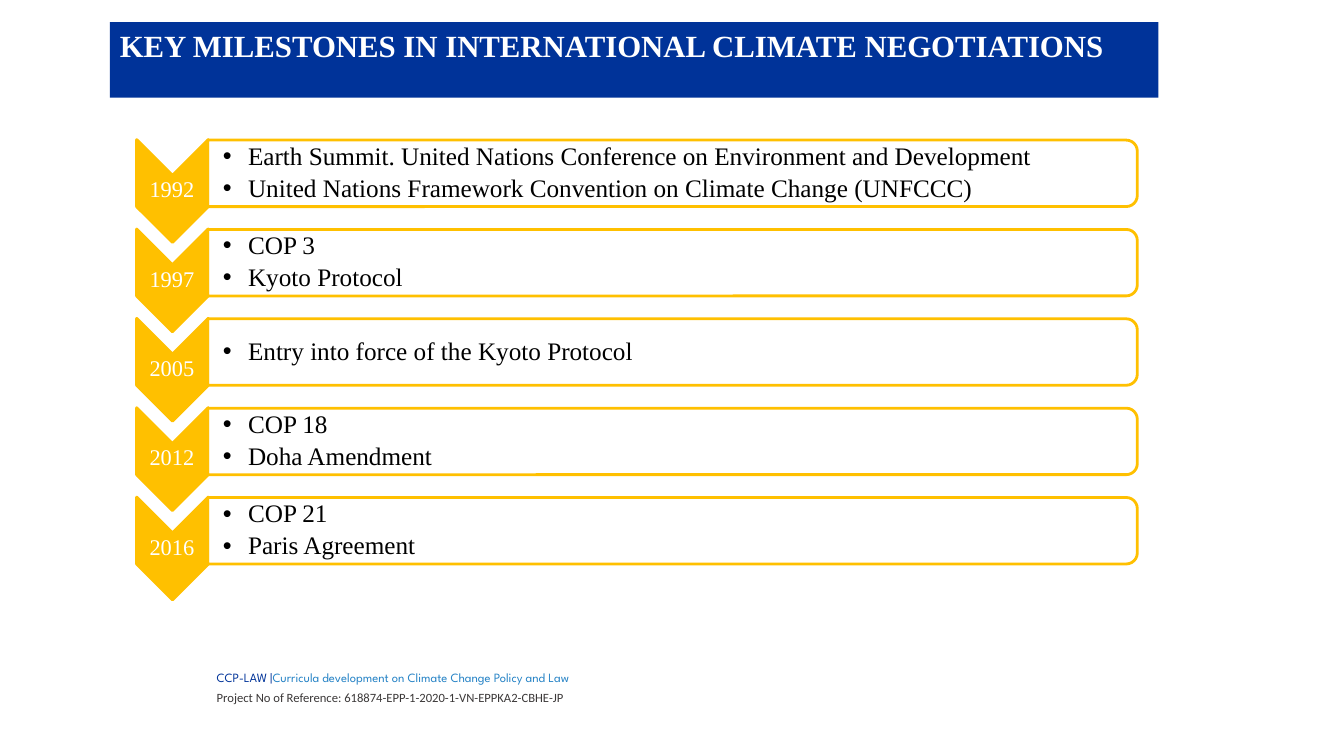
from lxml import etree
from pptx import Presentation
from pptx import util as u
from pptx.dml.color import RGBColor
from pptx.enum import shapes, text
from pptx.oxml.ns import qn

SERIF = "Times New Roman"
BLUE, GOLD, WHITE, BLACK = "003399", "FFC000", "FFFFFF", "000000"
TOP, STEP = 1.42, 0.8865
STONES = [
    ("1992", ["Earth Summit. United Nations Conference on Environment and Development",
              "United Nations Framework Convention on Climate Change (UNFCCC)"]),
    ("1997", ["COP 3", "Kyoto Protocol"]),
    ("2005", ["Entry into force of the Kyoto Protocol"]),
    ("2012", ["COP 18", "Doha Amendment"]),
    ("2016", ["COP 21", "Paris Agreement"]),
]
FOOT = [
    [("CCP-LAW |", "League Spartan", BLUE),
     ("Curricula development on Climate Change Policy and Law", "League Spartan", "2683C6")],
    [("Project No of Reference: 618874-EPP-1-2020-1-VN-EPPKA2-CBHE-JP", "Calibri", "3B3838")],
]


def rgb(code):
    return RGBColor.from_string(code)


def assign(item, **values):
    for name, value in values.items():
        setattr(item, name, value)


def inset(item, left, top, right, bottom):
    assign(item, margin_left=u.Inches(left), margin_top=u.Inches(top),
           margin_right=u.Inches(right), margin_bottom=u.Inches(bottom))


def write(par, words, size, color, face=SERIF, bold=False):
    run = par.add_run()
    run.text = words
    assign(run.font, size=u.Pt(size), name=face, bold=bold)
    run.font.color.rgb = rgb(color)


def shape(slide, kind, at, fill, line=None, turn=0):
    item = slide.shapes.add_shape(kind, *map(u.Inches, at))
    item.shadow.inherit = False
    item.rotation = turn
    item.fill.solid()
    item.fill.fore_color.rgb = rgb(fill)
    if line:
        item.line.color.rgb = rgb(line)
        item.line.width = u.Pt(2)
    else:
        item.line.fill.background()
    return item


def fade(item, share):
    """Set the opacity of a solid fill, in percent."""
    color = item.fill._xPr.find(qn("a:solidFill"))[0]
    etree.SubElement(color, qn("a:alpha")).set("val", str(share * 1000))


def label(slide, at, left=0.01):
    """Add a middle-anchored text box and return its frame."""
    frame = slide.shapes.add_textbox(*map(u.Inches, at)).text_frame
    assign(frame, word_wrap=True, vertical_anchor=text.MSO_ANCHOR.MIDDLE)
    inset(frame, left, 0.01, 0.01, 0.01)
    return frame


def lines(frame, count):
    """Yield the given number of paragraphs, starting with the first."""
    for num in range(count):
        yield frame.add_paragraph() if num else frame.paragraphs[0]


def bullet(par):
    props = par._p.get_or_add_pPr()
    indent = u.Inches(0.25)
    props.set("marL", str(indent))
    props.set("indent", str(-indent))
    color = etree.SubElement(props, qn("a:buClr"))
    etree.SubElement(color, qn("a:srgbClr")).set("val", BLACK)
    etree.SubElement(props, qn("a:buFont")).set("typeface", "Arial")
    etree.SubElement(props, qn("a:buChar")).set("char", "•")


def banner(slide, words):
    bar = shape(slide, shapes.MSO_SHAPE.RECTANGLE, (1.09, 0.22, 10.4, 0.75), BLUE)
    frame = bar.text_frame
    assign(frame, word_wrap=True, vertical_anchor=text.MSO_ANCHOR.TOP)
    inset(frame, 0.1, 0.05, 0.1, 0.05)
    par = frame.paragraphs[0]
    par.alignment = text.PP_ALIGN.LEFT
    write(par, words, 22, WHITE, bold=True)


def stone(slide, top, year, events):
    shape(slide, shapes.MSO_SHAPE.CHEVRON, (1.2, top + 0.12, 1.02, 0.71), GOLD, GOLD, 90)
    par = label(slide, (1.35, top + 0.32, 0.71, 0.3)).paragraphs[0]
    assign(par, alignment=text.PP_ALIGN.CENTER, line_spacing=0.9)
    write(par, year, 16, WHITE)

    panel = shape(slide, shapes.MSO_SHAPE.ROUND_2_SAME_RECTANGLE,
                  (6.34, top - 4.31, 0.66, 9.22), WHITE, GOLD, 90)
    fade(panel, 90)
    frame = label(slide, (2.07, top, 9.18, 0.6), 0.14)
    for par, event in zip(lines(frame, len(events)), events):
        assign(par, line_spacing=0.9, space_after=u.Pt(3.4))
        bullet(par)
        write(par, event, 18, BLACK)


def footer(slide):
    at = map(u.Inches, (1.3, 6.67, 4.52, 0.33))
    table = slide.shapes.add_table(1, 2, *at).table
    assign(table, first_row=False, horz_banding=False)
    for col, width in zip(table.columns, (0.78, 3.74)):
        col.width = u.Inches(width)
    for cell in table.iter_cells():
        cell.fill.background()
        cell.vertical_anchor = text.MSO_ANCHOR.MIDDLE
        inset(cell, 0.07, 0, 0.07, 0)
    frame = table.cell(0, 1).text_frame
    for num, par in enumerate(lines(frame, len(FOOT))):
        assign(par, line_spacing=1.07, space_before=u.Pt(3 * num))
        for words, face, color in FOOT[num]:
            write(par, words, 9, color, face)


def main():
    deck = Presentation()
    assign(deck, slide_width=u.Inches(13.33), slide_height=u.Inches(7.5))
    slide = deck.slides.add_slide(deck.slide_layouts[6])
    footer(slide)
    banner(slide, "KEY MILESTONES IN INTERNATIONAL CLIMATE NEGOTIATIONS")
    for num, (year, events) in enumerate(STONES):
        stone(slide, TOP + num * STEP, year, events)
    deck.save("out.pptx")


if __name__ == "__main__":
    main()
